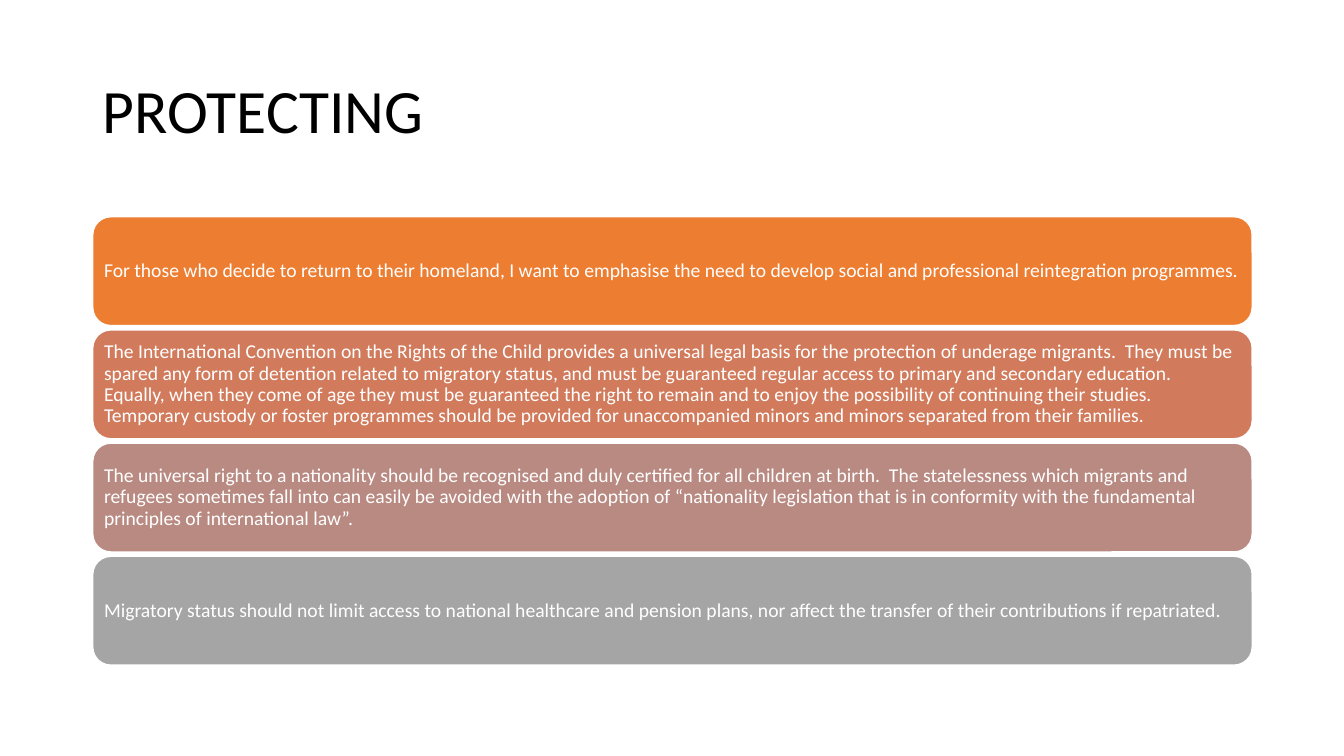
from pptx import Presentation
from pptx.dml.color import RGBColor
from pptx.enum.shapes import MSO_SHAPE
from pptx.enum.text import MSO_ANCHOR, MSO_AUTO_SIZE, PP_ALIGN
from pptx.util import Inches, Pt

ROUNDED = MSO_SHAPE.ROUNDED_RECTANGLE
MIDDLE = MSO_ANCHOR.MIDDLE
LEFT = PP_ALIGN.LEFT
NO_AUTOFIT = MSO_AUTO_SIZE.NONE
TITLE_ONLY = 5

MARGIN, CONTENT_WIDTH = 0.92, 11.5
FIRST_TOP, PANEL_HEIGHT, PANEL_PITCH = 2.15, 1.08, 1.123

MEASURES = [
    ("ED7D31", "For those who decide to return to their homeland, I want to emphasise "
               "the need to develop social and professional reintegration programmes."),
    ("D17B5C", "The International Convention on the Rights of the Child provides a "
               "universal legal basis for the protection of underage migrants.  They must "
               "be spared any form of detention related to migratory status, and must be "
               "guaranteed regular access to primary and secondary education.  Equally, "
               "when they come of age they must be guaranteed the right to remain and to "
               "enjoy the possibility of continuing their studies.  Temporary custody or "
               "foster programmes should be provided for unaccompanied minors and minors "
               "separated from their families."),
    ("B98A82", "The universal right to a nationality should be recognised and duly "
               "certified for all children at birth.  The statelessness which migrants and "
               "refugees sometimes fall into can easily be avoided with the adoption of "
               "“nationality legislation that is in conformity with the fundamental "
               "principles of international law”."),
    ("A5A5A5", "Migratory status should not limit access to national healthcare and "
               "pension plans, nor affect the transfer of their contributions if repatriated."),
]


def rgb(value):
    return RGBColor.from_string(value)


def write_text(frame, text, *, size, color, font, inset_x, inset_y):
    frame.word_wrap = True
    frame.auto_size = NO_AUTOFIT
    frame.vertical_anchor = MIDDLE
    frame.margin_left = frame.margin_right = Inches(inset_x)
    frame.margin_top = frame.margin_bottom = Inches(inset_y)
    paragraph = frame.paragraphs[0]
    paragraph.alignment = LEFT
    paragraph.line_spacing = 0.9
    run = paragraph.add_run()
    run.text = text
    run.font.name = font
    run.font.size = Pt(size)
    run.font.color.rgb = rgb(color)


class PanelSlide:
    font = "Calibri"
    title_color = "000000"
    panel_text_color = "FFFFFF"
    outline_color = "FFFFFF"

    def __init__(self, presentation):
        self.slide = presentation.slides.add_slide(presentation.slide_layouts[TITLE_ONLY])

    def title(self, text, left, top, width, height):
        heading = self.slide.shapes.title
        heading.left, heading.top = Inches(left), Inches(top)
        heading.width, heading.height = Inches(width), Inches(height)
        write_text(heading.text_frame, text, size=44, color=self.title_color,
                   font=self.font, inset_x=0.1, inset_y=0.05)

    def panel(self, text, fill, left, top, width, height):
        panel = self.slide.shapes.add_shape(
            ROUNDED, Inches(left), Inches(top), Inches(width), Inches(height))
        panel.shadow.inherit = False
        panel.fill.solid()
        panel.fill.fore_color.rgb = rgb(fill)
        panel.line.color.rgb = rgb(self.outline_color)
        panel.line.width = Pt(1)
        write_text(panel.text_frame, text, size=14, color=self.panel_text_color,
                   font=self.font, inset_x=0.06, inset_y=0.06)


def main():
    presentation = Presentation()
    presentation.slide_width = Inches(13.33)
    presentation.slide_height = Inches(7.5)
    protecting = PanelSlide(presentation)
    protecting.title("PROTECTING", MARGIN, 0.4, CONTENT_WIDTH, 1.45)
    for row, (fill, measure) in enumerate(MEASURES):
        protecting.panel(measure, fill, MARGIN, FIRST_TOP + row * PANEL_PITCH,
                         CONTENT_WIDTH, PANEL_HEIGHT)
    presentation.save("out.pptx")


if __name__ == "__main__":
    main()
